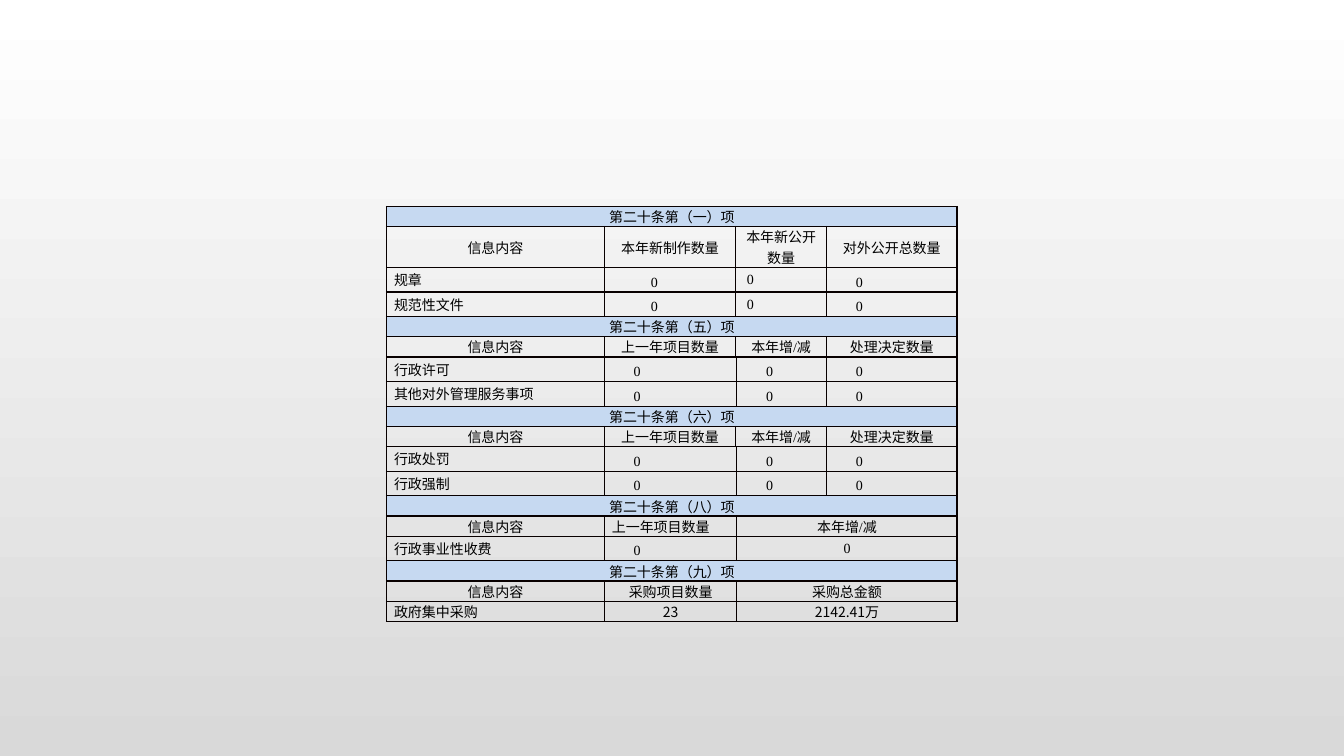
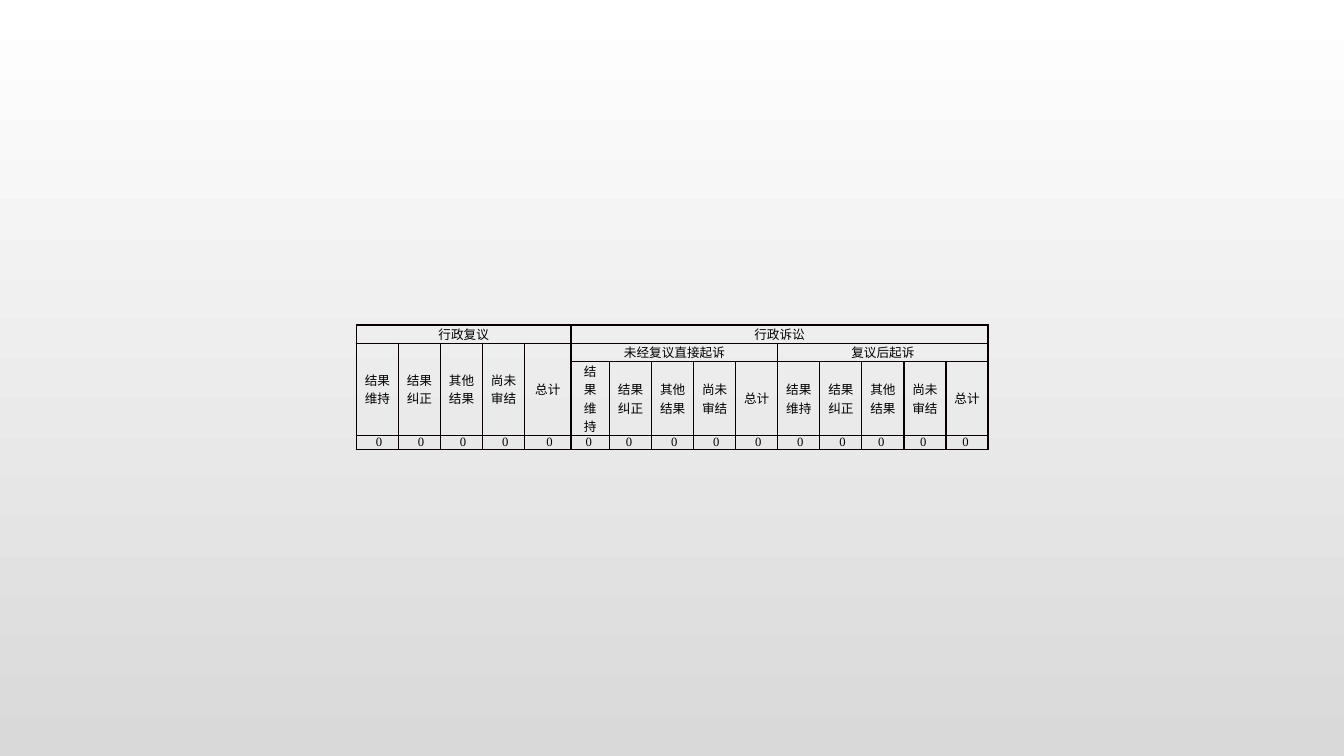
from lxml.etree import SubElement
from pptx import Presentation
from pptx.dml.color import RGBColor
from pptx.enum.text import MSO_ANCHOR as Anchor, PP_ALIGN as Align
from pptx.oxml import parse_xml
from pptx.oxml.ns import nsdecls, qn
from pptx.util import Cm, Pt

BLACK = RGBColor(0x00, 0x00, 0x00)
BORDER = RGBColor(0x08, 0x00, 0x00)
SECTION_BLUE = RGBColor(0xC6, 0xD9, 0xF1)
WHITE = RGBColor(0xFF, 0xFF, 0xFF)
GREY = RGBColor(0xD9, 0xD9, 0xD9)
SERIF = "Times New Roman"
CHINESE = "Noto Sans CJK SC"
INSET = 0.19  # cm, left and right of each cell


def add_grid(slide, left, top, widths, heights):
    """Add a plain table with unfilled, thinly bordered cells."""
    table = slide.shapes.add_table(
        len(heights), len(widths), Cm(left), Cm(top),
        Cm(sum(widths)), Cm(sum(heights))).table
    table.first_row = table.horz_banding = False
    for column, width in zip(table.columns, widths):
        column.width = Cm(width)
    for row, height in zip(table.rows, heights):
        row.height = Cm(height)
    for cell in table.iter_cells():
        cell.margin_top = cell.margin_bottom = 0
        cell.fill.background()
        properties = cell._tc.get_or_add_tcPr()
        for index, side in enumerate("LRTB"):
            properties.insert(index, parse_xml(
                f'<a:ln{side} {nsdecls("a")} w="{Pt(1)}"><a:solidFill>'
                f'<a:srgbClr val="{BORDER}"/></a:solidFill></a:ln{side}>'))
    return table


def write_cell(table, row, column, text, size, rows=1, columns=1, align=Align.CENTER,
               font=SERIF, fill=None, left=0, right=0, top=0):
    """Merge a cell over its span and write one run in it."""
    cell = table.cell(row, column)
    if rows * columns > 1:
        cell.merge(table.cell(row + rows - 1, column + columns - 1))
    cell.vertical_anchor = Anchor.MIDDLE
    cell.margin_left, cell.margin_right = Cm(INSET + left), Cm(INSET + right)
    cell.margin_top = Cm(top)
    if fill is not None:
        cell.fill.solid()
        cell.fill.fore_color.rgb = fill
    paragraph = cell.text_frame.paragraphs[0]
    paragraph.alignment = align
    run = paragraph.add_run()
    run.text = text
    run.font.size = Pt(size)
    run.font.name = font
    run.font.color.rgb = BLACK
    SubElement(run.font._element, qn("a:ea")).set("typeface", CHINESE)


presentation = Presentation()
presentation.slide_width, presentation.slide_height = Cm(33.87), Cm(19.05)
blank_layout = presentation.slide_layouts[6]

# Shared background: white fading down to grey
background = presentation.slide_master.background.fill
background.gradient()
background.gradient_angle = 270
for stop, color, position in zip(background.gradient_stops, (WHITE, GREY), (0, 1)):
    stop.color.rgb = color
    stop.position = position

# Slide 1: disclosure figures by section
# Each section: number, headings, row labels, values, spans of the columns
FOUR_EARLY, FOUR_LATE, THREE = (1, 1, 2, 1), (1, 2, 1, 1), (1, 2, 2)
CHANGE = ["信息内容", "上一年项目数量", "本年增/减", "处理决定数量"]
SECTIONS = [
    ("一", ["信息内容", "本年新制作数量", "本年新公开数量", "对外公开总数量"],
     ["规章", "规范性文件"], ["0"] * 3, FOUR_EARLY),
    ("五", CHANGE, ["行政许可", "其他对外管理服务事项"], ["0"] * 3, FOUR_LATE),
    ("六", CHANGE, ["行政处罚", "行政强制"], ["0"] * 3, FOUR_LATE),
    ("八", CHANGE[:3], ["行政事业性收费"], ["0"] * 2, THREE),
    ("九", ["信息内容", "采购项目数量", "采购总金额"],
     ["政府集中采购"], ["23", "2142.41万"], THREE),
]
LINE, DATA_LINE, TWO_LINES = 0.5, 0.62, 1.03
heights = []
for number, headings, labels, values, spans in SECTIONS:
    heights += [LINE, TWO_LINES if number == "一" else LINE]
    heights += [LINE if number == "九" else DATA_LINE] * len(labels)

slide = presentation.slides.add_slide(blank_layout)
table = add_grid(slide, 9.74, 5.2, [5.49, 3.31, 0.03, 2.26, 3.29], heights)
row = 0
for number, headings, labels, values, spans in SECTIONS:
    write_cell(table, row, 0, f"第二十条第（{number}）项", 10, columns=5, fill=SECTION_BLUE)
    row += 1
    heading_spans = FOUR_EARLY if len(spans) == 4 else THREE
    for index, heading in enumerate(headings):
        align = Align.LEFT if number == "八" and index == 1 else Align.CENTER
        write_cell(table, row, sum(heading_spans[:index]), heading, 10,
                   columns=heading_spans[index], align=align)
    for label in labels:
        row += 1
        write_cell(table, row, 0, label, 10, align=Align.LEFT)
        for index, value in enumerate(values, start=1):
            # Zeros are indented from the left; other values are centred
            if number == "九":
                style = {"font": CHINESE}
            elif number == "八" and index == 2:
                style = {}
            elif number == "一" and index == 2:
                style = {"align": Align.LEFT, "left": 0.09}
            else:
                indent = 0.98 if number == "一" and index == 1 else 0.55
                style = {"align": Align.LEFT, "left": indent, "top": 0.13}
            write_cell(table, row, sum(spans[:index]), value, 10,
                       columns=spans[index], **style)
    row += 1

# Slide 2: reviews and lawsuits
OUTCOMES = ["结果维持", "结果纠正", "其他结果", "尚未审结", "总计"]
LEFT_SHIFTED = (5, 6, 12, 13, 14)
slide = presentation.slides.add_slide(blank_layout)
table = add_grid(slide, 8.98, 8.19, [1.06] * 4 + [1.17, 0.97] + [1.06] * 9,
                 [0.46, 0.46, 1.85, 0.36])
write_cell(table, 0, 0, "行政复议", 9, columns=5)
write_cell(table, 0, 5, "行政诉讼", 9, columns=10)
write_cell(table, 1, 5, "未经复议直接起诉", 9, columns=5)
write_cell(table, 1, 10, "复议后起诉", 9, columns=5)
for column, outcome in enumerate(OUTCOMES * 3):
    if column < 5:
        write_cell(table, 1, column, outcome, 9, rows=2)
    else:
        write_cell(table, 2, column, outcome, 9)
    side = "right" if column in LEFT_SHIFTED else "left"
    write_cell(table, 3, column, "0", 9, **{side: 0.08})

presentation.save("out.pptx")
